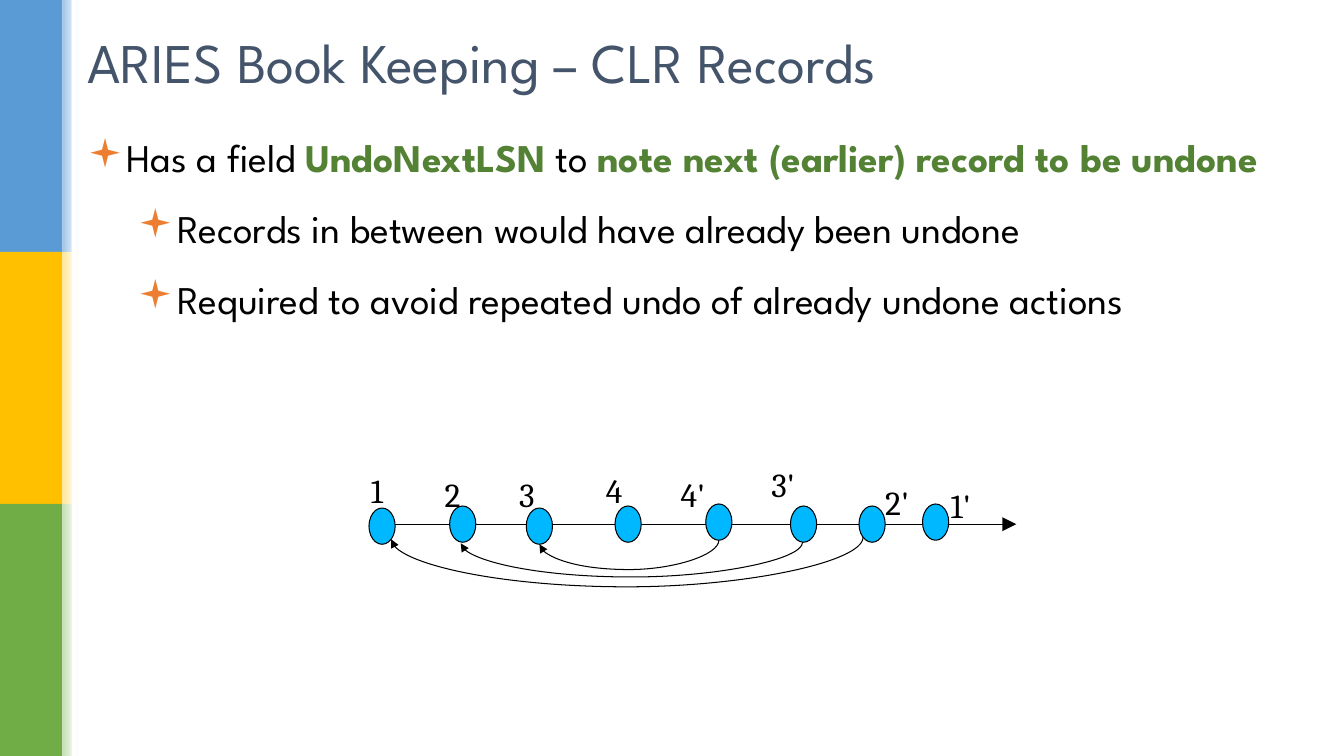
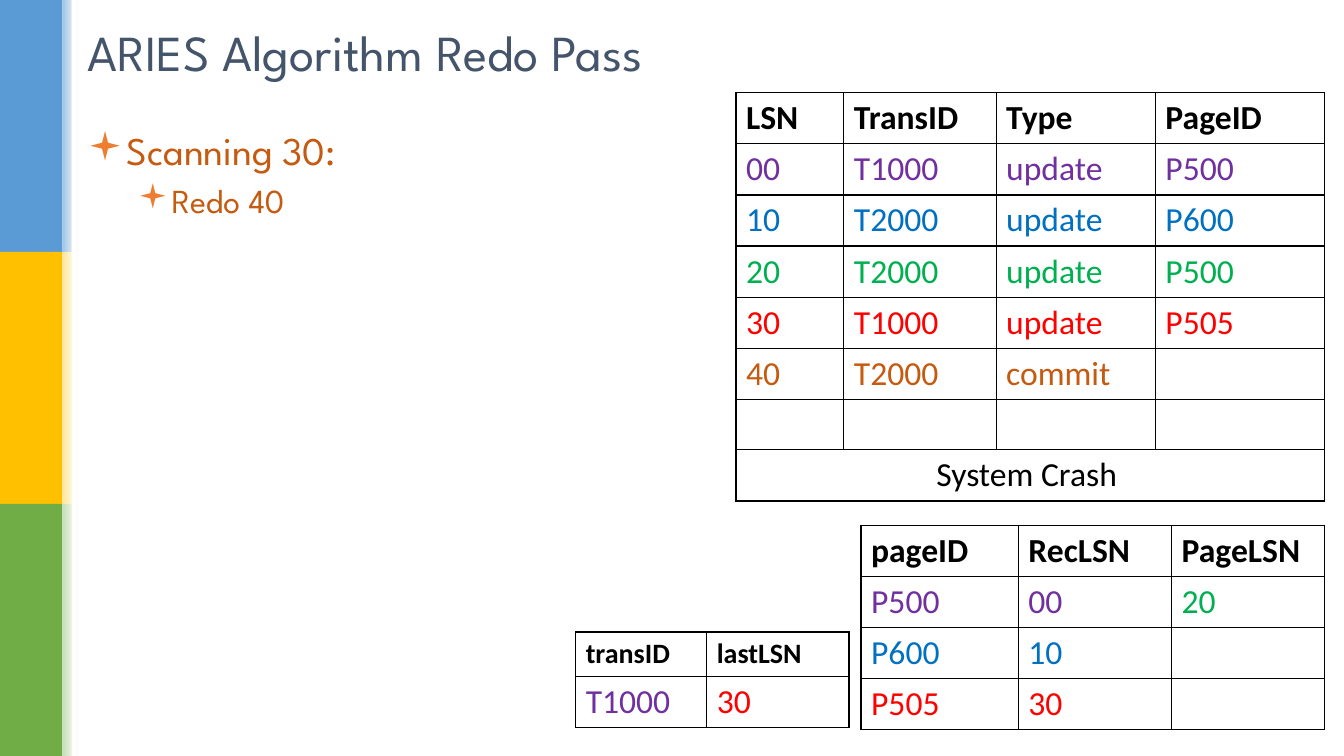
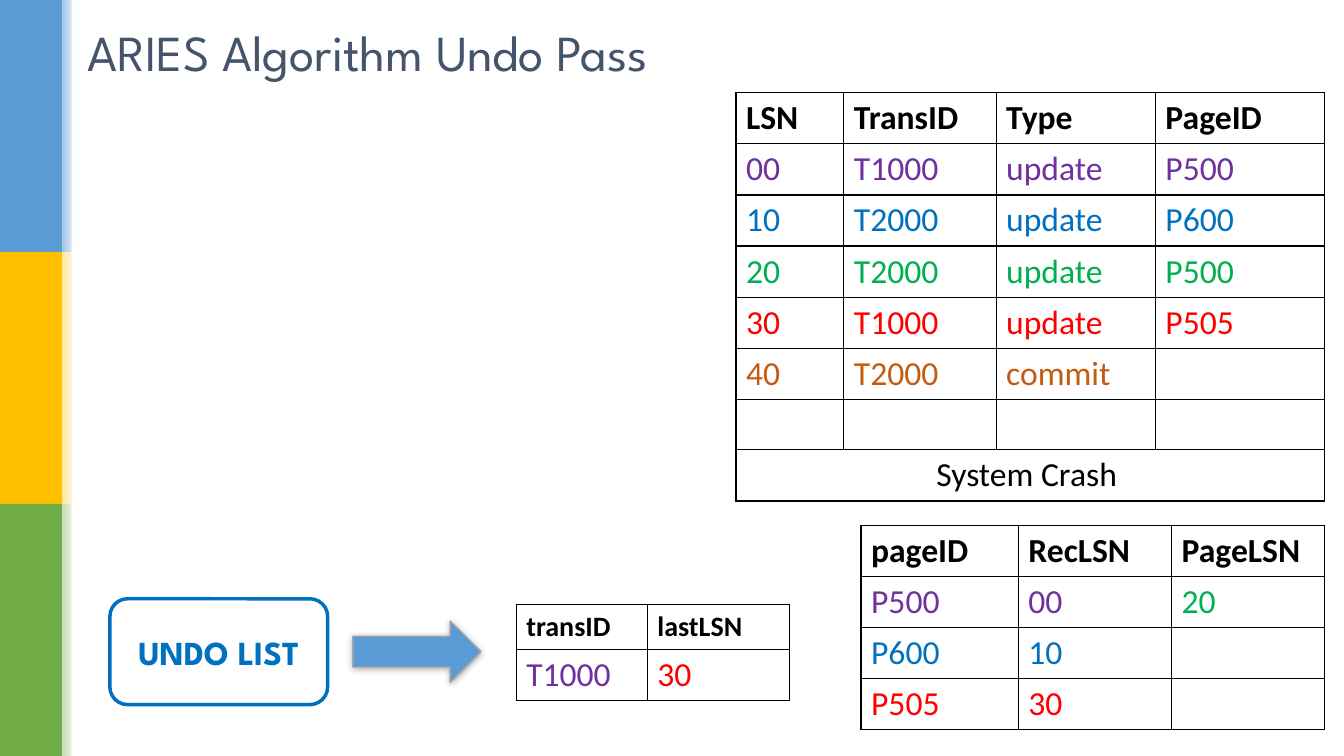
from lxml.etree import SubElement
from pptx import Presentation
from pptx.dml.color import RGBColor
from pptx.enum.shapes import MSO_CONNECTOR as Line, MSO_SHAPE as Shape
from pptx.enum.text import MSO_ANCHOR as Anchor, MSO_AUTO_SIZE as AutoSize, PP_ALIGN as Align
from pptx.oxml.ns import qn
from pptx.util import Inches, Pt

BLACK = RGBColor(0, 0, 0)
WHITE = RGBColor(255, 255, 255)
SLATE = RGBColor(0x44, 0x54, 0x6A)
SKY = RGBColor(0x5B, 0x9B, 0xD5)
GOLD = RGBColor(0xFF, 0xC0, 0x00)
LEAF = RGBColor(0x70, 0xAD, 0x47)
PALE_SKY = RGBColor(0x9D, 0xC3, 0xE6)
PALE_GOLD = RGBColor(0xFF, 0xE6, 0x99)
PALE_LEAF = RGBColor(0xC5, 0xE0, 0xB4)
MOSS = RGBColor(0x54, 0x82, 0x35)
ORANGE = RGBColor(0xED, 0x7D, 0x31)
GREY = RGBColor(0xA5, 0xA5, 0xA5)
CYAN = RGBColor(0x00, 0xB8, 0xFF)
PURPLE = RGBColor(0x70, 0x30, 0xA0)
BLUE = RGBColor(0x00, 0x70, 0xC0)
GREEN = RGBColor(0x00, 0xB0, 0x50)
RED = RGBColor(0xFF, 0, 0)
RUST = RGBColor(0xC5, 0x5A, 0x11)

HEAD_FONT = "League Spartan"
TABLE_FONT = "Calibri"
LABEL_FONT = "Cambria"
BULLET_FONT = "Wingdings"


def write(p, text, size=24, color=BLACK, font=HEAD_FONT, bold=False, align=None):
    r = p.add_run()
    r.text = text
    r.font.size = Pt(size)
    r.font.name = font
    r.font.bold = bold
    r.font.color.rgb = color
    if align is not None:
        p.alignment = align


def add_xml(parent, tag, **attrs):
    return SubElement(parent, qn(tag), {k: str(v) for k, v in attrs.items()})


def row(color, *texts):
    return [(text, color) for text in texts]


class Deck:
    def __init__(self):
        self.prs = Presentation()
        self.prs.slide_width = Inches(13.33)
        self.prs.slide_height = Inches(7.5)
        self.layout = self.prs.slide_layouts.get_by_name("Title Only")

    def slide(self, title, size=36, width=10.34, height=0.58):
        self.s = self.prs.slides.add_slide(self.layout)
        self.side_bands()
        sp = self.s.shapes.title
        sp.left, sp.top = Inches(0.77), Inches(0.22)
        sp.width, sp.height = Inches(width), Inches(height)
        tf = sp.text_frame
        tf.auto_size = AutoSize.NONE
        tf.vertical_anchor = Anchor.MIDDLE
        write(tf.paragraphs[0], title, size=size, color=SLATE, align=Align.LEFT)

    def side_bands(self):
        bands = ((SKY, PALE_SKY), (GOLD, PALE_GOLD), (LEAF, PALE_LEAF))
        for i, (solid, pale) in enumerate(bands):
            self.shape(Shape.RECTANGLE, 0, 2.5 * i, 0.62, 2.5, fill=solid)
            sp = self.shape(Shape.RECTANGLE, 0.62, 2.5 * i, 0.16, 2.5)
            sp.fill.gradient()
            sp.fill.gradient_angle = 0
            for stop, color in zip(sp.fill.gradient_stops, (pale, WHITE)):
                stop.color.rgb = color
        self.shape(Shape.RECTANGLE, 0.71, 0, 0.05, 7.5, fill=WHITE)

    def shape(self, kind, x, y, w, h, fill=None, line=None, weight=0.75):
        sp = self.s.shapes.add_shape(kind, Inches(x), Inches(y), Inches(w), Inches(h))
        sp.shadow.inherit = False
        if fill is None:
            sp.fill.background()
        else:
            sp.fill.solid()
            sp.fill.fore_color.rgb = fill
        if line is None:
            sp.line.fill.background()
        else:
            sp.line.color.rgb = line
            sp.line.width = Pt(weight)
        return sp

    def block_arrow(self, x, y, w, h):
        sp = self.shape(Shape.RIGHT_ARROW, x, y, w, h, fill=SKY, line=GREY, weight=1)
        effects = sp.element.spPr.find(qn("a:effectLst"))
        shadow = add_xml(effects, "a:outerShdw", blurRad=Pt(5), dist=Pt(1), dir=5400000, rotWithShape=0)
        add_xml(add_xml(shadow, "a:srgbClr", val=BLACK), "a:alpha", val=32000)

    def arrow(self, x1, y1, x2, y2, kind=Line.STRAIGHT, head="med"):
        c = self.s.shapes.add_connector(kind, Inches(x1), Inches(y1), Inches(x2), Inches(y2))
        c.line.color.rgb = BLACK
        c.line.width = Pt(0.75)
        spPr = c.element.spPr
        add_xml(spPr.find(qn("a:ln")), "a:tailEnd", type="triangle", w=head, len=head)
        add_xml(spPr, "a:effectLst")
        return spPr

    def back_arc(self, x1, y1, x2, y2, depth):
        cx, cy = (x1 + x2) / 2, (y1 + y2) / 2
        drop, span = y2 - y1, x1 - x2
        spPr = self.arrow(cx - drop / 2, cy - span / 2, cx + drop / 2, cy + span / 2, Line.CURVE)
        spPr.find(qn("a:xfrm")).set("rot", "5400000")
        guides = spPr.find(qn("a:prstGeom")).find(qn("a:avLst"))
        add_xml(guides, "a:gd", name="adj1", fmla=f"val {round(depth / drop * 100000)}")

    def label(self, text, x, y):
        tf = self.s.shapes.add_textbox(Inches(x), Inches(y), Inches(0.26), Inches(0.4)).text_frame
        tf.margin_left = tf.margin_right = tf.margin_top = tf.margin_bottom = 0
        tf.paragraphs[0].line_spacing = 0.85
        write(tf.paragraphs[0], text, font=LABEL_FONT)

    def bullets(self, x, y, w, h, items, after=0):
        tf = self.s.shapes.add_textbox(Inches(x), Inches(y), Inches(w), Inches(h)).text_frame
        tf.word_wrap = True
        for i, (level, size, runs) in enumerate(items):
            p = tf.add_paragraph() if i else tf.paragraphs[0]
            p.level = level
            pPr = p._p.get_or_add_pPr()
            pPr.set("marL", str(Inches(0.25 + 0.5 * level)))
            pPr.set("indent", str(Inches(-0.25)))
            add_xml(add_xml(pPr, "a:buClr"), "a:srgbClr", val=ORANGE)
            add_xml(pPr, "a:buFont", typeface=BULLET_FONT, charset=2)
            add_xml(pPr, "a:buChar", char="▪")
            p.line_spacing = 0.9
            p.space_before = Pt(0.3 * size if i else 0)
            p.space_after = Pt(after)
            for text, color, bold in runs:
                write(p, text, size=size, color=color, bold=bold)

    def table(self, x, y, widths, rows, head_size=24, head_height=0.5):
        heights = [head_height] + [0.5] * (len(rows) - 1)
        frame = self.s.shapes.add_table(len(rows), len(widths), Inches(x), Inches(y),
                                        Inches(sum(widths)), Inches(sum(heights)))
        t = frame.table
        t.first_row = t.horz_banding = False
        for column, width in zip(t.columns, widths):
            column.width = Inches(width)
        for i, cells in enumerate(rows):
            t.rows[i].height = Inches(heights[i])
            for j in range(len(widths)):
                self.frame_cell(t.cell(i, j))
            spans = len(cells) == 1
            if spans:
                t.cell(i, 0).merge(t.cell(i, len(widths) - 1))
            for j, (text, color) in enumerate(cells):
                if text:
                    write(t.cell(i, j).text_frame.paragraphs[0], text, color=color, font=TABLE_FONT,
                          size=24 if i else head_size, bold=i == 0,
                          align=Align.CENTER if spans else Align.LEFT)

    def frame_cell(self, cell):
        tcPr = cell._tc.get_or_add_tcPr()
        for side in "LRTB":
            ln = add_xml(tcPr, f"a:ln{side}", w=Pt(1))
            add_xml(add_xml(ln, "a:solidFill"), "a:srgbClr", val=BLACK)
        cell.fill.background()

    def crash_tables(self, trans_x, trans_y):
        self.table(7.3, 0.92, (1.07, 1.51, 1.58, 1.68), [
            row(BLACK, "LSN", "TransID", "Type", "PageID"),
            row(PURPLE, "00", "T1000", "update", "P500"),
            row(BLUE, "10", "T2000", "update", "P600"),
            row(GREEN, "20", "T2000", "update", "P500"),
            row(RED, "30", "T1000", "update", "P505"),
            row(RUST, "40", "T2000", "commit", ""),
            row(BLACK, "", "", "", ""),
            row(BLACK, "System Crash "),
        ])
        self.table(8.54, 5.21, (1.56, 1.52, 1.52), [
            row(BLACK, "pageID", "RecLSN", "PageLSN"),
            row(PURPLE, "P500", "00") + row(GREEN, "20"),
            row(BLUE, "P600", "10", ""),
            row(RED, "P505", "30", ""),
        ])
        self.table(trans_x, trans_y, (1.3, 1.41), [
            row(BLACK, "transID", "lastLSN"),
            row(PURPLE, "T1000") + row(RED, "30"),
        ], head_size=20, head_height=0.43)


def clr_records(deck):
    deck.slide("ARIES Book Keeping – CLR Records", size=40, width=9.65, height=0.78)
    deck.bullets(0.77, 1.33, 11.83, 3.7, [
        (0, 28, [("Has a field ", BLACK, False), ("UndoNextLSN", MOSS, True), (" to ", BLACK, False),
                 ("note next (earlier) record to be undone", MOSS, True)]),
        (1, 28, [("Records in between would have already been undone", BLACK, False)]),
        (1, 28, [("Required to avoid repeated undo of already undone actions", BLACK, False)]),
    ], after=12)
    deck.arrow(3.66, 5.2, 10.08, 5.2, head="lg")
    records = (
        ("1", 3.66, 5.04, 3.68, 4.72),
        ("2", 4.46, 5.02, 4.41, 4.76),
        ("3", 5.22, 5.04, 5.15, 4.76),
        ("4", 6.1, 5.02, 6.01, 4.72),
        ("4'", 7, 5, 6.75, 4.76),
        ("3'", 7.84, 5.02, 7.65, 4.66),
        ("2'", 8.52, 5.02, 8.78, 4.84),
        ("1'", 9.15, 5, 9.43, 4.87),
    )
    for text, x, y, label_x, label_y in records:
        deck.shape(Shape.OVAL, x, y, 0.26, 0.36, fill=CYAN, line=BLACK)
        deck.label(text, label_x, label_y)
    deck.back_arc(7.96, 5.38, 4.57, 5.39, depth=0.35)
    deck.back_arc(7.13, 5.36, 5.35, 5.4, depth=0.29)
    deck.back_arc(8.56, 5.33, 3.88, 5.35, depth=0.49)


def redo_pass(deck):
    deck.slide("ARIES Algorithm Redo Pass")
    deck.crash_tables(5.71, 6.27)
    deck.bullets(0.77, 1.26, 6.02, 4.95, [
        (0, 28, [("Scanning 30:", RUST, False)]),
        (1, 24, [("Redo 40", RUST, False)]),
    ])


def undo_pass(deck):
    deck.slide("ARIES Algorithm Undo Pass")
    deck.crash_tables(5.12, 6)
    deck.block_arrow(3.5, 6.16, 1.27, 0.61)
    sp = deck.shape(Shape.ROUNDED_RECTANGLE, 1.09, 5.94, 2.16, 1.05, line=BLUE, weight=2.5)
    tf = sp.text_frame
    tf.vertical_anchor = Anchor.MIDDLE
    write(tf.paragraphs[0], "UNDO LIST", color=BLUE, bold=True, align=Align.CENTER)


def main():
    deck = Deck()
    clr_records(deck)
    redo_pass(deck)
    undo_pass(deck)
    deck.prs.save("out.pptx")


if __name__ == "__main__":
    main()
